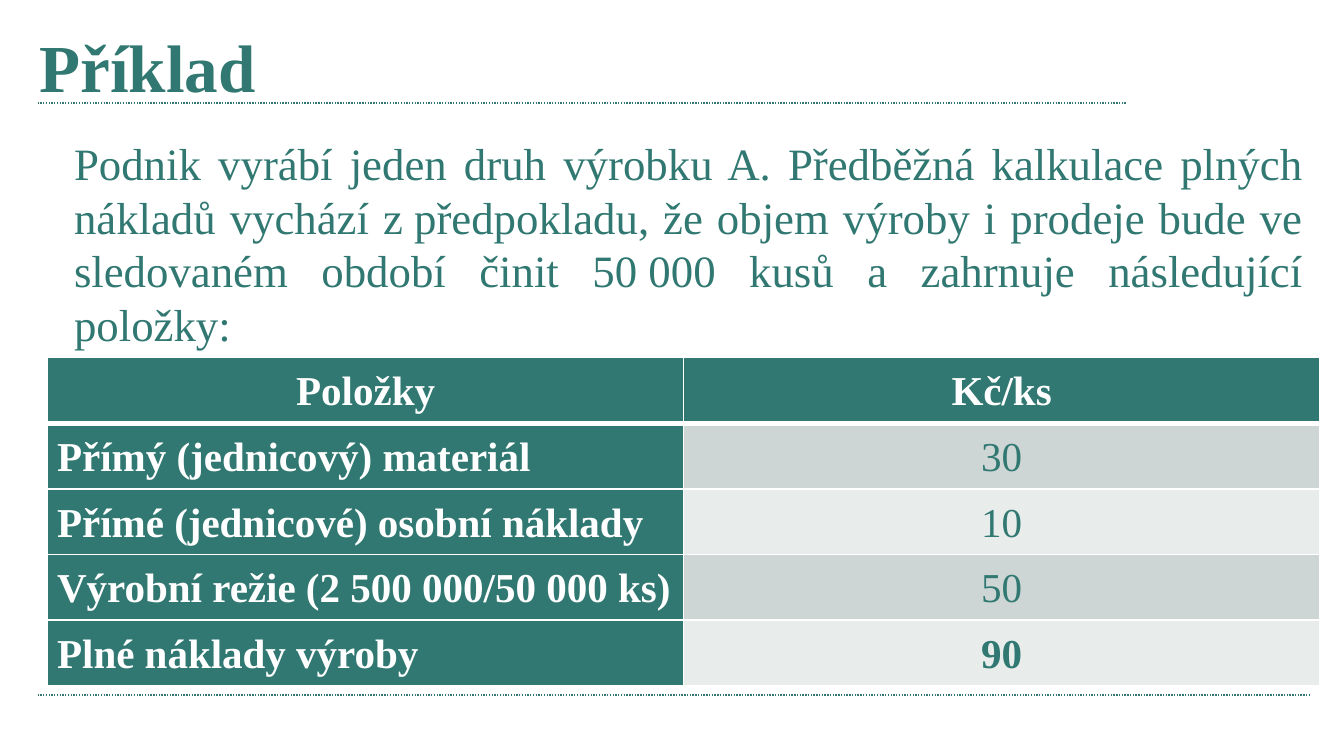
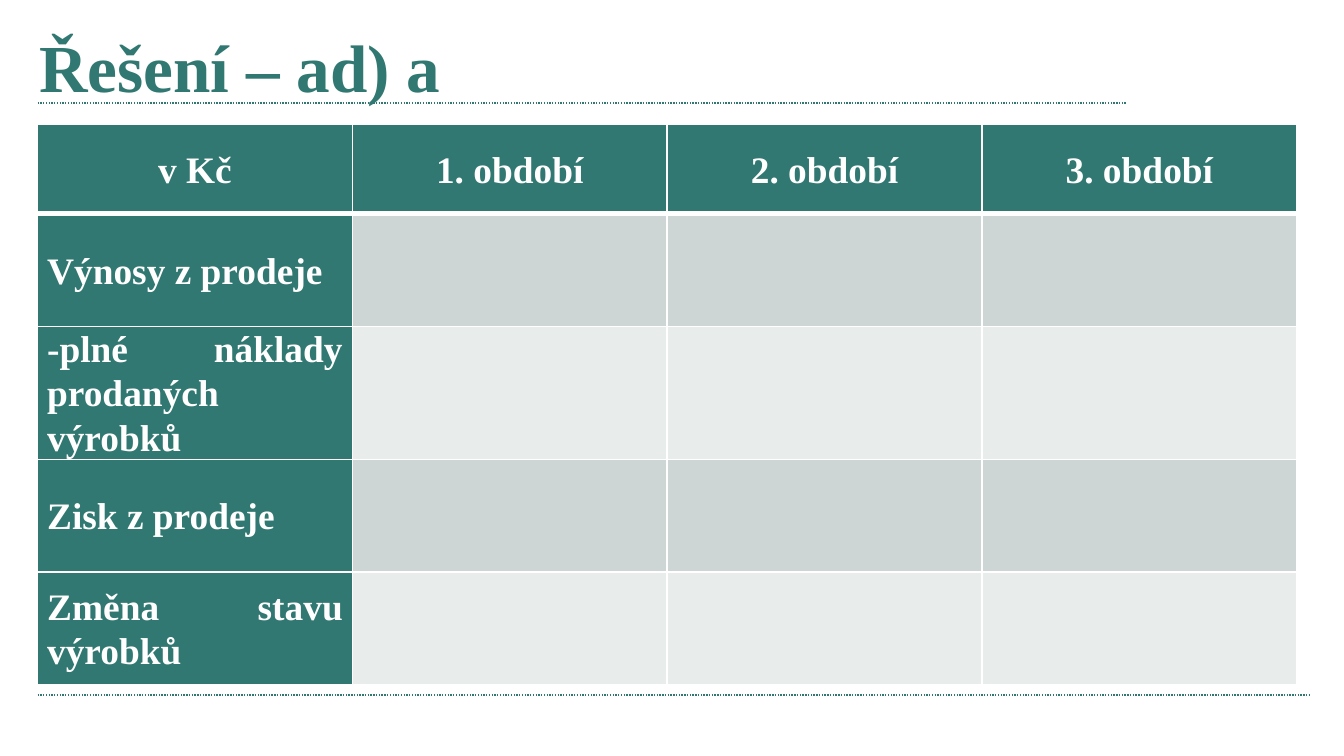
from dataclasses import dataclass

from lxml import etree
from pptx import Presentation
from pptx.dml.color import RGBColor
from pptx.enum import dml, shapes, text
from pptx.oxml.ns import qn
from pptx.util import Cm, Pt


@dataclass(frozen=True)
class Theme:
    font: str = "Times New Roman"
    teal: str = "307871"
    white: str = "FFFFFF"
    bands: tuple = ("CDD6D5", "E8ECEB")
    title: int = 36
    body: int = 24
    cost_table: int = 22
    period_table: int = 20


THEME = Theme()
NBSP = chr(160)
LEFT = text.PP_ALIGN.LEFT
CENTER = text.PP_ALIGN.CENTER
JUSTIFY = text.PP_ALIGN.JUSTIFY


def write(tf, content, size, color=THEME.teal, bold=False, align=LEFT, spacing=None):
    p = tf.paragraphs[0]
    p.alignment = align
    if spacing:
        p.line_spacing = spacing
    r = p.add_run()
    r.text = content
    r.font.name = THEME.font
    r.font.size = Pt(size)
    r.font.bold = bold
    r.font.color.rgb = RGBColor.from_string(color)


def add_rule(s, y, right):
    line = s.shapes.add_connector(
        shapes.MSO_CONNECTOR.STRAIGHT, Cm(0.71), Cm(y), Cm(right), Cm(y))
    line.line.color.rgb = RGBColor.from_string(THEME.teal)
    line.line.width = Pt(0.75)
    line.line.dash_style = dml.MSO_LINE.ROUND_DOT
    etree.SubElement(line.element.spPr, qn("a:effectLst"))
    s.shapes.title.element.addprevious(line.element)


def add_slide(prs, title):
    s = prs.slides.add_slide(prs.slide_layouts[5])
    sp = s.shapes.title
    sp.left, sp.top, sp.width, sp.height = Cm(0.49), Cm(0.36), Cm(22.4), Cm(2)
    sp.text_frame.vertical_anchor = text.MSO_ANCHOR.TOP
    write(sp.text_frame, title, THEME.title, bold=True)
    add_rule(s, 1.95, 21.3)
    add_rule(s, 13.14, 24.76)
    return s


def add_body(s, content):
    tf = s.shapes.add_textbox(Cm(1.15), Cm(2.44), Cm(23.72), Cm(5.89)).text_frame
    tf.word_wrap = True
    write(tf, content, THEME.body, align=JUSTIFY)


def add_border(cell, side, width):
    ln = etree.SubElement(
        cell._tc.get_or_add_tcPr(), qn(f"a:ln{side}"), w=str(Pt(width)))
    fill = etree.SubElement(ln, qn("a:solidFill"))
    etree.SubElement(fill, qn("a:srgbClr"), val=THEME.white)


def style_cell(cell, row, col):
    add_border(cell, "L", 1)
    add_border(cell, "R", 1)
    if row == 0:
        add_border(cell, "T", 1)
    add_border(cell, "B", 3 if row == 0 else 1)
    heading = row == 0 or col == 0
    cell.fill.solid()
    cell.fill.fore_color.rgb = RGBColor.from_string(
        THEME.teal if heading else THEME.bands[(row - 1) % 2])
    cell.vertical_anchor = text.MSO_ANCHOR.MIDDLE
    cell.margin_left = cell.margin_right = Cm(0.18)
    cell.margin_top = cell.margin_bottom = 0


def add_table(s, rows, left, top, col_width, heights, size, label_align=LEFT, bold_rows=()):
    n_rows, n_cols = len(rows), len(rows[0])
    table = s.shapes.add_table(
        n_rows, n_cols, Cm(left), Cm(top),
        Cm(col_width * n_cols), Cm(sum(heights))).table
    for column in table.columns:
        column.width = Cm(col_width)
    for i, values in enumerate(rows):
        table.rows[i].height = Cm(heights[i])
        for j, value in enumerate(values):
            cell = table.cell(i, j)
            style_cell(cell, i, j)
            if value:
                heading = i == 0 or j == 0
                write(cell.text_frame, value, size,
                      color=THEME.white if heading else THEME.teal,
                      bold=heading or i in bold_rows,
                      align=label_align if i and j == 0 else CENTER,
                      spacing=1.07)


def main():
    prs = Presentation()
    prs.slide_width, prs.slide_height = Cm(25.4), Cm(14.29)

    s = add_slide(prs, "Příklad")
    add_body(s, "Podnik vyrábí jeden druh výrobku A. Předběžná kalkulace plných "
                f"nákladů vychází z{NBSP}předpokladu, že objem výroby i prodeje bude ve "
                f"sledovaném období činit 50{NBSP}000 kusů a zahrnuje následující položky:")
    costs = [
        ("Položky", "Kč/ks"),
        ("Přímý (jednicový) materiál", "30"),
        ("Přímé (jednicové) osobní náklady", "10"),
        (f"Výrobní režie (2{NBSP}500{NBSP}000/50 000 ks)", "50"),
        ("Plné náklady výroby", "90"),
    ]
    add_table(s, costs, 0.9, 6.76, 12.02, [1.24] * 5, THEME.cost_table, bold_rows=(4,))

    s = add_slide(prs, "Řešení – ad) a")
    labels = [f"Výnosy z{NBSP}prodeje", "-plné náklady prodaných výrobků",
              f"Zisk z{NBSP}prodeje", "Změna stavu výrobků"]
    periods = [["v Kč"] + [f"{n}. období" for n in range(1, 4)]]
    periods += [[label, "", "", ""] for label in labels]
    add_table(s, periods, 0.71, 2.35, 5.95, [1.69] + [2.13] * 4,
              THEME.period_table, label_align=JUSTIFY)

    prs.save("out.pptx")


if __name__ == "__main__":
    main()
